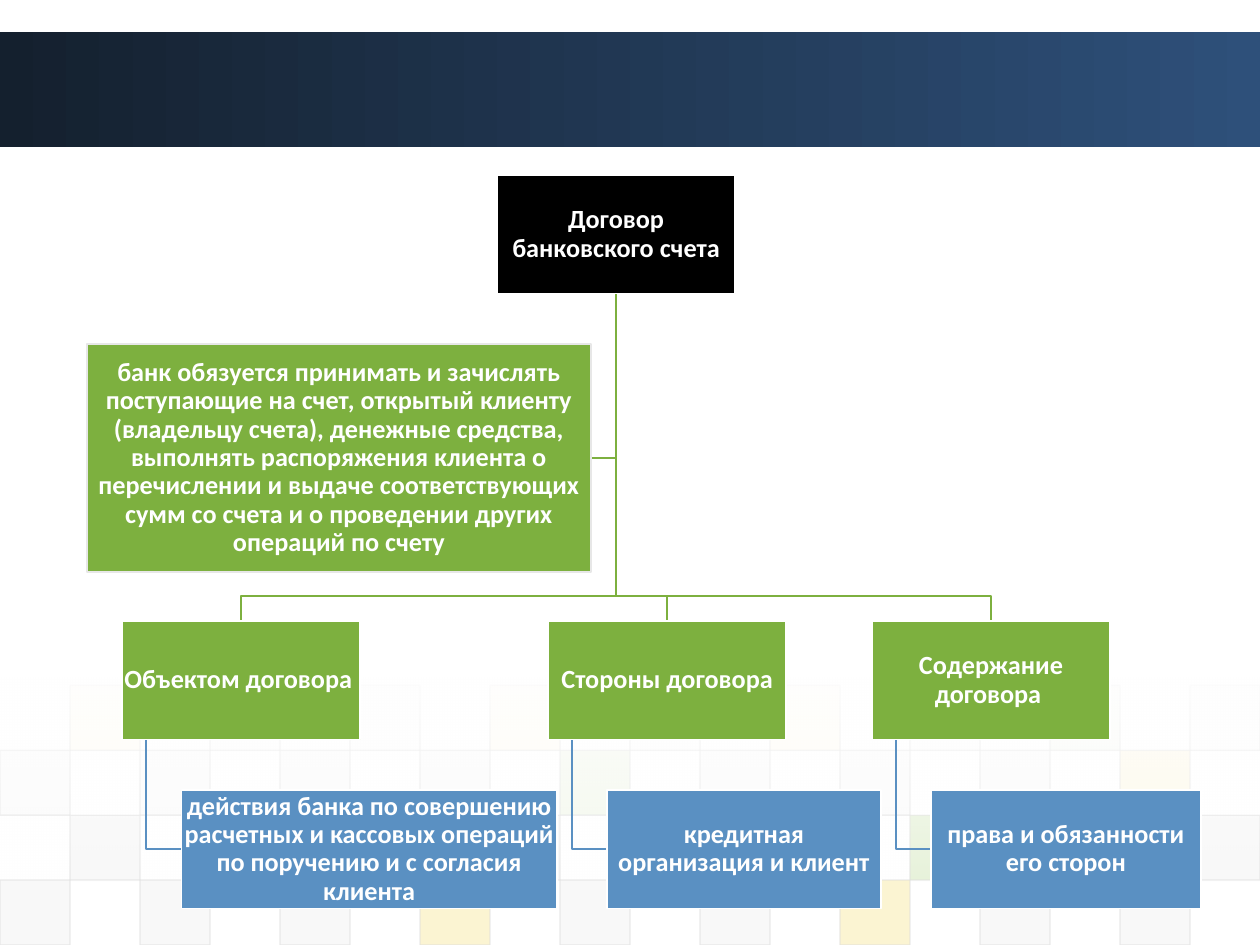
from lxml.etree import SubElement as Sub
from pptx import Presentation
from pptx.dml.color import RGBColor as RGB
from pptx.enum.shapes import MSO_SHAPE as Kind
from pptx.enum.text import MSO_ANCHOR as Anchor, PP_ALIGN as Align
from pptx.oxml.ns import qn
from pptx.util import Inches, Pt

# The slide is a grid of 100 columns by 75 rows
COLS, ROWS = 100, 75
CELL = Inches(0.1)
WHITE, GREEN, BLUE, GREY = "FFFFFF", "7DB03F", "5A90C2", "DDDDDD"
WIDE, HIGH = 18.9, 9.4  # usual size of a chart box
TINTS = {"g": "8AC246", "y": "EFC821", "d": GREY, "e": "EAEAEA"}
TILES = [  # opacity of a row, then its tiles by column
    (5, ".y.e.e.y.d.y.e.g.e"),
    (10, "d.d.d.d.g.d.d.d.y."),
    (20, ".d.....d.....g...d"),
    (20, "d.d.d.y.d.d.y.d.d."),
]


def hue(code):
    return RGB.from_string(code)


def span(count):
    return round(count * CELL)


def fade(part, *levels):
    """Set the opacity, in percent, of each colour in the part in turn."""
    for color, level in zip(part._element.spPr.iter(qn("a:srgbClr")), levels):
        Sub(color, qn("a:alpha"), val=str(level * 1000))


def rect(slide, box, fill=None, line=None, width=1):
    part = slide.shapes.add_shape(Kind.RECTANGLE, *map(span, box))
    part.shadow.inherit = False
    if fill:
        part.fill.solid()
        part.fill.fore_color.rgb = hue(fill)
    if line:
        part.line.color.rgb = hue(line)
        part.line.width = Pt(width)
    else:
        part.line.fill.background()
    return part


def blend(slide, box, start, end, angle):
    part = rect(slide, box)
    part.fill.gradient()
    part.fill.gradient_angle = angle
    for stop, code in zip(part.fill.gradient_stops, (start, end)):
        stop.color.rgb = hue(code)
    return part


def label(slide, box, text, fill, line=WHITE):
    part = rect(slide, box, fill, line)
    frame = part.text_frame
    frame.word_wrap = True
    frame.vertical_anchor = Anchor.MIDDLE
    frame.margin_left = frame.margin_right = Inches(0.01)
    frame.margin_top = frame.margin_bottom = Inches(0.01)
    para = frame.paragraphs[0]
    para.text = text
    para.alignment = Align.CENTER
    para.line_spacing = 0.9
    font = para.font
    font.name, font.size, font.bold = "Calibri", Pt(15), True
    font.color.rgb = hue(WHITE)


def wire(slide, color, *points):
    first, *rest = [(span(x), span(y)) for x, y in points]
    pen = slide.shapes.build_freeform(*first)
    pen.add_line_segments(rest, close=False)
    part = pen.convert_to_shape()
    part.shadow.inherit = False
    part.fill.background()
    part.line.color.rgb = hue(color)
    part.line.width = Pt(1)


def mosaic(slide, box):
    """Rows of pale tiles under a white veil."""
    left, top, wide, high = box
    step, rise = wide / len(TILES[0][1]), high / len(TILES)
    for row, (level, line) in enumerate(TILES):
        for col, key in enumerate(line):
            if key in TINTS:
                cell = (left + col * step, top + row * rise, step, rise)
                tile = rect(slide, cell, TINTS[key], GREY, 0.75)
                fade(tile, level, 60)
    veil = blend(slide, (left, top - 0.6, wide, 16.2), WHITE, WHITE, 270)
    fade(veil, 90, 0)


def branch(slide, box, root, head, note, reach):
    """A green box hung from the root, with a blue box below it."""
    left, top, wide, high = box
    mid, foot, stem, inset = left + wide / 2, top + high, left + 1.9, left + 4.7
    low = foot + 4
    wire(slide, GREEN, root, (root[0], top - 2), (mid, top - 2), (mid, top))
    wire(slide, BLUE, (stem, foot), (stem, low + high / 2),
         (inset, low + high / 2))
    label(slide, box, head, GREEN)
    label(slide, (inset, low, reach, high), note, BLUE)


def chart(slide, box):
    """The root box, its side note and three branches."""
    left, top, wide, high = box
    mid = left + 42
    root = (mid, top + HIGH)
    side = (left, top + 13.4, 40, 18.1)
    level = side[1] + side[3] / 2
    wire(slide, GREEN, root, (mid, level), (left + side[2], level))
    branches = [
        (2.8, "Объектом договора ", "действия банка по совершению расчетных "
         "и кассовых операций по поручению и с согласия клиента", 29.8),
        (36.6, "Стороны договора", "кредитная организация и клиент", 21.7),
        (62.3, "Содержание договора ", "права и обязанности его сторон", 21.4),
    ]
    for shift, head, note, reach in branches:
        spot = (left + shift, top + high - 2 * HIGH - 4, WIDE, HIGH)
        branch(slide, spot, root, head, note, reach)
    label(slide, (mid - WIDE / 2, top, WIDE, HIGH),
          "Договор банковского счета", "000000")
    label(slide, side, "банк обязуется принимать и зачислять поступающие на "
          "счет, открытый клиенту (владельцу счета), денежные средства, "
          "выполнять распоряжения клиента о перечислении и выдаче "
          "соответствующих сумм со счета и о проведении других операций "
          "по счету", GREEN, "E7E7E7")


def main():
    deck = Presentation()
    deck.slide_width, deck.slide_height = span(COLS), span(ROWS)
    slide = deck.slides.add_slide(deck.slide_layouts[6])
    blend(slide, (0, 2.5, COLS, 9.2), "14202E", "2E507A", 0)
    mosaic(slide, (0, 54.4, COLS, ROWS - 54.4))
    chart(slide, (6.9, 13.9, 88.4, 58.2))
    deck.save("out.pptx")


if __name__ == "__main__":
    main()
